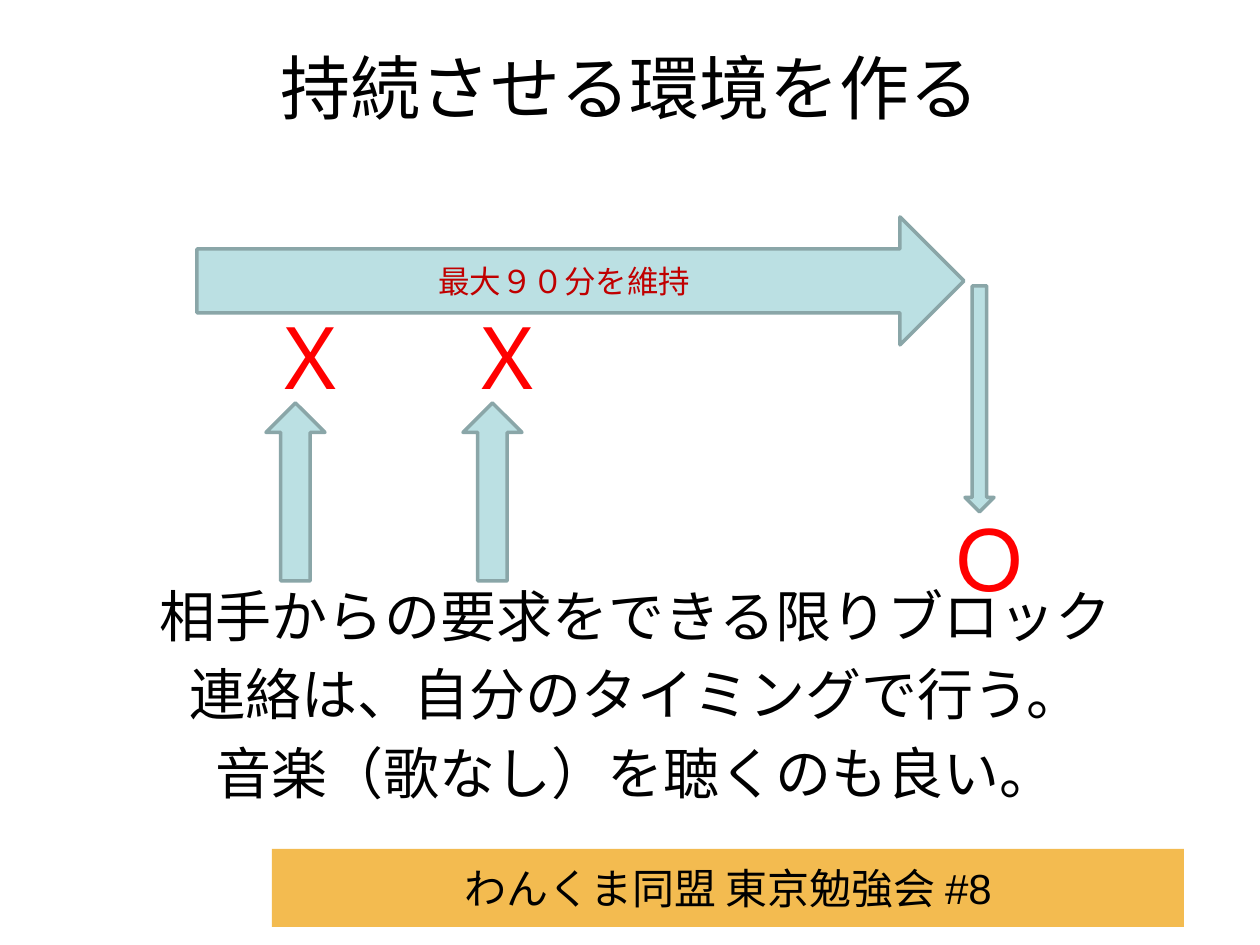
"""Build a slide on protecting up to ninety minutes of concentration."""
from dataclasses import dataclass

from pptx import Presentation
from pptx.dml.color import RGBColor
from pptx.enum.shapes import MSO_SHAPE
from pptx.enum.text import MSO_ANCHOR, PP_ALIGN
from pptx.util import Emu, Pt


@dataclass(frozen=True)
class Theme:
    font: str = "Arial"
    ink: str = "000000"
    mark: str = "FF0000"
    label: str = "C00000"
    arrow: str = "BBE0E3"
    outline: str = "8AA6A8"
    footer: str = "F3BB50"
    title_size: int = 40
    body_size: int = 32
    footer_size: int = 24
    label_size: int = 18
    mark_size: int = 48


THEME = Theme()
EMU_PER_PX = 914400 / 126


def px(*lengths):
    return [Emu(round(length * EMU_PER_PX)) for length in lengths]


def write(shape, lines, size, color, align=PP_ALIGN.CENTER, anchor=MSO_ANCHOR.MIDDLE):
    frame = shape.text_frame
    frame.word_wrap = True
    frame.vertical_anchor = anchor
    frame.text = "\n".join(lines)
    for index, paragraph in enumerate(frame.paragraphs):
        paragraph.alignment = align
        paragraph.space_before = Pt(size * 0.2 if index else 0)
        paragraph.font.name = THEME.font
        paragraph.font.size = Pt(size)
        paragraph.font.color.rgb = RGBColor.from_string(color)


presentation = Presentation()
presentation.slide_width, presentation.slide_height = px(1260, 945)
slide = presentation.slides.add_slide(presentation.slide_layouts[6])
shapes = slide.shapes

footer = shapes.add_shape(MSO_SHAPE.RECTANGLE, *px(272, 849, 912, 78))
footer.shadow.inherit = False
footer.fill.solid()
footer.fill.fore_color.rgb = RGBColor.from_string(THEME.footer)
footer.line.fill.background()
write(footer, ["わんくま同盟 東京勉強会 #8"], THEME.footer_size, THEME.ink)

title = shapes.add_textbox(*px(63, 38, 1134, 97))
write(title, ["持続させる環境を作る"], THEME.title_size, THEME.ink)

advice = shapes.add_textbox(*px(69, 575, 1134, 269))
advice_lines = [
    "相手からの要求をできる限りブロック",
    "連絡は、自分のタイミングで行う。",
    "音楽（歌なし）を聴くのも良い。",
]
write(advice, advice_lines, THEME.body_size, THEME.ink, anchor=MSO_ANCHOR.TOP)

arrows = [
    (MSO_SHAPE.RIGHT_ARROW, (197, 217, 767, 128), "最大９０分を維持"),
    (MSO_SHAPE.UP_ARROW, (266, 403, 59, 178), ""),
    (MSO_SHAPE.UP_ARROW, (463, 403, 59, 178), ""),
    (MSO_SHAPE.DOWN_ARROW, (965, 286, 29, 226), ""),
]
for kind, box, label in arrows:
    arrow = shapes.add_shape(kind, *px(*box))
    arrow.shadow.inherit = False
    arrow.fill.solid()
    arrow.fill.fore_color.rgb = RGBColor.from_string(THEME.arrow)
    arrow.line.color.rgb = RGBColor.from_string(THEME.outline)
    arrow.line.width = Pt(2)
    if label:
        write(arrow, [label], THEME.label_size, THEME.label)

for symbol, left, top in [("Ｘ", 256, 299), ("Ｘ", 453, 299), ("Ｏ", 935, 501)]:
    mark = shapes.add_textbox(*px(left, top, 88, 115))
    write(mark, [symbol], THEME.mark_size, THEME.mark, PP_ALIGN.LEFT, MSO_ANCHOR.TOP)

presentation.save("out.pptx")
